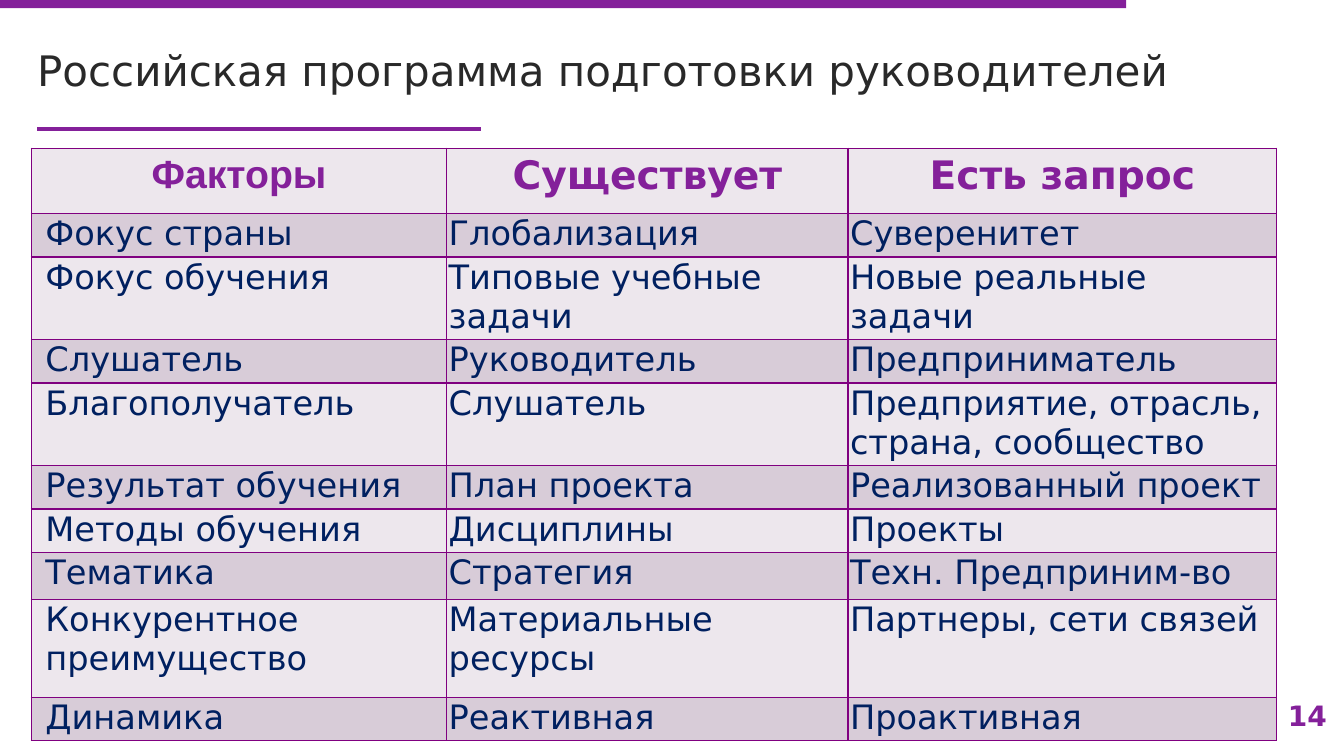
"""Build the slide comparing existing and requested factors of a management training programme."""
import pptx
import pptx.dml.color
import pptx.enum.shapes
import pptx.enum.text
import pptx.oxml
import pptx.oxml.ns
import pptx.util
from lxml import etree

RGBColor = pptx.dml.color.RGBColor
PURPLE = RGBColor(0x84, 0x20, 0x9A)
BORDER = RGBColor(0x80, 0x00, 0x80)
CHARCOAL = RGBColor(0x29, 0x29, 0x29)
NAVY = RGBColor(0x00, 0x20, 0x60)
LIGHT_BAND = RGBColor(0xED, 0xE7, 0xED)
DARK_BAND = RGBColor(0xD8, 0xCC, 0xD8)
FONT = "DejaVu Sans"
ALIGN = pptx.enum.text.PP_ALIGN

presentation = pptx.Presentation()
presentation.slide_width = pptx.util.Inches(13.33)
presentation.slide_height = pptx.util.Inches(7.5)
slide = presentation.slides.add_slide(presentation.slide_layouts[6])


def place(*percents):
    """Turn percents of the slide's width and height, in turn, into lengths."""
    sides = (presentation.slide_width, presentation.slide_height)
    return [int(sides[index % 2] * percent / 100) for index, percent in enumerate(percents)]


def write(frame, text, size, color, bold=False, align=ALIGN.LEFT, font=FONT):
    """Put one styled paragraph into a text frame."""
    frame.word_wrap = True
    paragraph = frame.paragraphs[0]
    paragraph.text = text
    paragraph.alignment = align
    paragraph.font.name = font
    paragraph.font.size = pptx.util.Pt(size)
    paragraph.font.bold = bold
    paragraph.font.color.rgb = color


underline = slide.shapes.add_connector(
    pptx.enum.shapes.MSO_CONNECTOR.STRAIGHT, *place(35.78, 17.07, 2.78, 17.07))
underline.line.color.rgb = PURPLE
underline.line.width = pptx.util.Pt(2.25)
etree.SubElement(underline._element.spPr, pptx.oxml.ns.qn("a:effectLst"))

top_bar = slide.shapes.add_shape(
    pptx.enum.shapes.MSO_SHAPE.RECTANGLE, *place(0, 0, 83.8, 1.07))
top_bar.shadow.inherit = False
top_bar.fill.solid()
top_bar.fill.fore_color.rgb = PURPLE
top_bar.line.fill.background()

title = slide.shapes.add_textbox(*place(2.03, 1.6, 92.87, 15.33))
title.text_frame.vertical_anchor = pptx.enum.text.MSO_ANCHOR.MIDDLE
write(title.text_frame, "Российская программа подготовки руководителей", 30, CHARCOAL)

FACTORS = [
    ("Факторы", "Существует", "Есть запрос"),
    ("Фокус страны", "Глобализация", "Суверенитет"),
    ("Фокус обучения", "Типовые учебные задачи", "Новые реальные задачи"),
    ("Слушатель", "Руководитель", "Предприниматель"),
    ("Благополучатель", "Слушатель", "Предприятие, отрасль, страна, сообщество"),
    ("Результат обучения", "План проекта", "Реализованный проект"),
    ("Методы обучения", "Дисциплины", "Проекты"),
    ("Тематика", "Стратегия", "Техн. Предприним-во"),
    ("Конкурентное преимущество", "Материальные ресурсы", "Партнеры, сети связей"),
    ("Динамика", "Реактивная", "Проактивная"),
]
COLUMN_SHARES = [30.91, 29.86, 31.88]
ROW_SHARES = [8.67, 5.73, 10.13, 5.73, 10.13, 5.73, 5.73, 6.27, 12.93, 5.73]

table = slide.shapes.add_table(
    len(ROW_SHARES), len(COLUMN_SHARES),
    *place(2.33, 19.6, sum(COLUMN_SHARES), sum(ROW_SHARES))).table
for column, share in zip(table.columns, COLUMN_SHARES):
    column.width = place(share)[0]
for row, share in zip(table.rows, ROW_SHARES):
    row.height = place(0, share)[1]

for row_index, factor in enumerate(FACTORS):
    for column_index, text in enumerate(factor):
        cell = table.cell(row_index, column_index)
        for side in ("lnL", "lnR", "lnT", "lnB"):
            cell._tc.get_or_add_tcPr().append(pptx.oxml.parse_xml(
                f'<a:{side} {pptx.oxml.ns.nsdecls("a")} w="{pptx.util.Pt(1)}">'
                f'<a:solidFill><a:srgbClr val="{BORDER}"/></a:solidFill></a:{side}>'))
        cell.fill.solid()
        cell.fill.fore_color.rgb = DARK_BAND if row_index % 2 else LIGHT_BAND
        if row_index == 0:
            write(cell.text_frame, text, 28, PURPLE, True, ALIGN.CENTER,
                  FONT if column_index else "Arial")
        else:
            cell.margin_left = pptx.util.Inches(0.02 if column_index else 0.14)
            cell.margin_right = pptx.util.Inches(0.02)
            cell.margin_top = cell.margin_bottom = pptx.util.Inches(0.01)
            write(cell.text_frame, text, 24, NAVY)

page_number = slide.shapes.add_textbox(*place(89.42, 89.87, 10.05, 9.47))
page_number.text_frame.vertical_anchor = pptx.enum.text.MSO_ANCHOR.MIDDLE
write(page_number.text_frame, "14", 20, PURPLE, True, ALIGN.RIGHT)

presentation.save("out.pptx")
